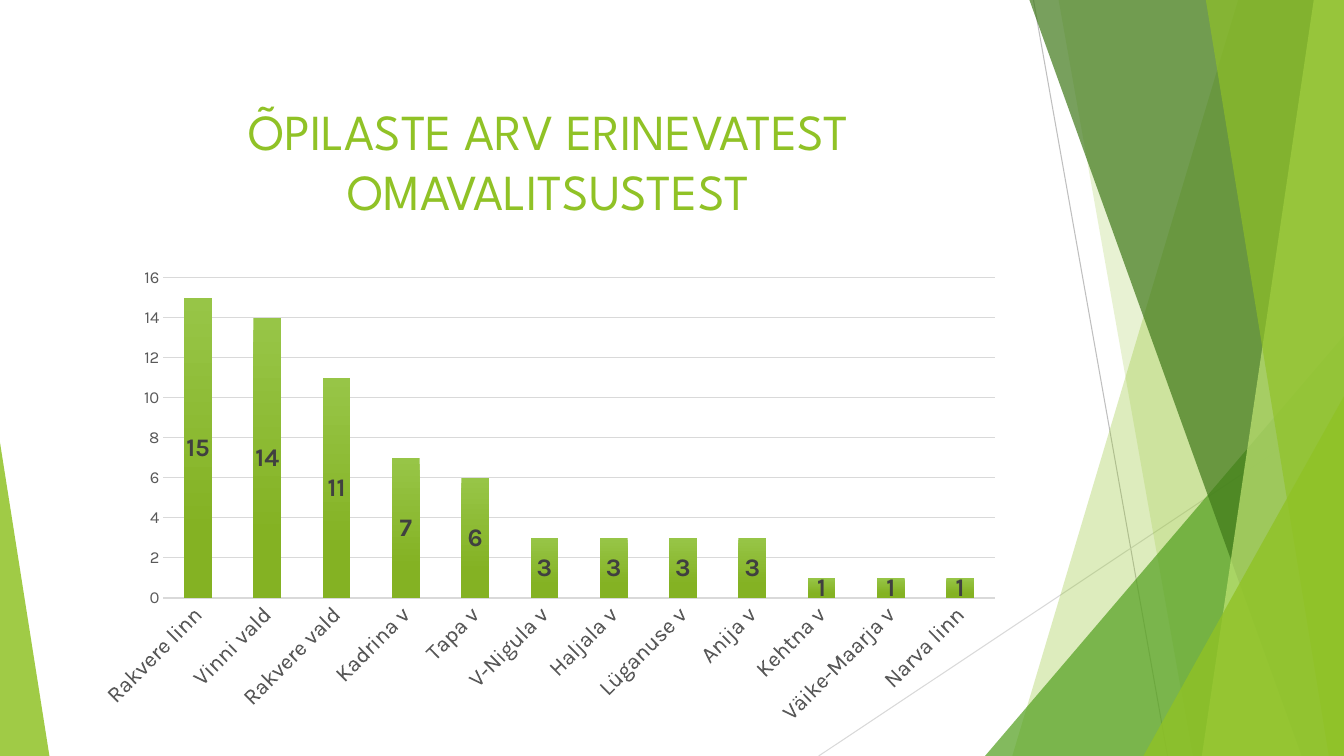
from lxml import etree
from pptx import Presentation, util as u
from pptx.chart.data import CategoryChartData
from pptx.dml.color import RGBColor
from pptx.enum import chart as charts, shapes, text
from pptx.oxml import ns

PX = 9144  # 100 px to the inch
WIDTH, HEIGHT = 1333, 750

LIME = RGBColor(0x90, 0xC2, 0x26)
PALE_LIME = RGBColor(0xC0, 0xE4, 0x74)
GREEN = RGBColor(0x54, 0xA0, 0x21)
DARK_GREEN = RGBColor(0x3F, 0x78, 0x19)
BAR_TOP = RGBColor(0x97, 0xC5, 0x47)
BAR_BOTTOM = RGBColor(0x84, 0xB2, 0x23)
RULE_GREY = RGBColor(0xBF, 0xBF, 0xBF)
LIGHT_GREY = RGBColor(0xD9, 0xD9, 0xD9)
AXIS_GREY = RGBColor(0x59, 0x59, 0x59)
LABEL_GREY = RGBColor(0x40, 0x40, 0x40)

TITLE_FONT, CHART_FONT = "League Spartan", "Karla"

PUPILS = {
    "Rakvere linn": 15, "Vinni vald": 14, "Rakvere vald": 11, "Kadrina v": 7,
    "Tapa v": 6, "V-Nigula v": 3, "Haljala v": 3, "Lüganuse v": 3,
    "Anija v": 3, "Kehtna v": 1, "Väike-Maarja v": 1, "Narva linn": 1,
}


def px(*lengths):
    return [u.Emu(length * PX) for length in lengths]


def set_font(font, name, size, color, bold=False):
    font.name, font.size, font.bold = name, u.Pt(size), bold
    font.color.rgb = color


def add_rule(page, start, end, color):
    rule = page.shapes.add_connector(
        shapes.MSO_CONNECTOR.STRAIGHT, *px(*start, *end))
    rule.line.color.rgb = color
    rule.line.width = u.Pt(0.75)
    etree.SubElement(rule._element.spPr, ns.qn("a:effectLst"))


def tint(shape, color, opacity):
    """Fill a shape with a see-through colour, without outline or shadow."""
    shape.shadow.inherit = False
    shape.line.fill.background()
    shape.fill.solid()
    shape.fill.fore_color.rgb = color
    srgb = shape._element.spPr.find(".//" + ns.qn("a:srgbClr"))
    etree.SubElement(srgb, ns.qn("a:alpha"), val=str(opacity * 1000))


def add_band(page, box, top_x, bottom_x, color, opacity):
    """Fill from a slanted left edge to the right side of the box."""
    left, top, width, height = box
    right, bottom = left + width, top + height
    builder = page.shapes.build_freeform(left + top_x, top, scale=PX)
    builder.add_line_segments(
        [(right, top), (right, bottom), (left + bottom_x, bottom)], close=True)
    tint(builder.convert_to_shape(), color, opacity)


def add_corner(page, box, apex, color, opacity):
    """Triangle whose apex lies at the given share of its width."""
    corner = page.shapes.add_shape(
        shapes.MSO_SHAPE.ISOSCELES_TRIANGLE, *px(*box))
    corner.adjustments[0] = apex
    tint(corner, color, opacity)


def add_facets(page, box):
    left, top, width, height = box
    right, bottom = left + width, top + height
    add_rule(page, (left + 48, top), (left + 181, bottom), RULE_GREY)
    add_rule(page, (right, top + 403), (left - 165, bottom), LIGHT_GREY)
    add_band(page, box, 251, 27, LIME, 30)
    add_band(page, box, 73, 206, LIME, 20)
    add_corner(page, (left, bottom - 417, width, 417), 1, GREEN, 72)
    add_band(page, box, 44, 314, DARK_GREEN, 70)
    add_band(page, box, 326, 215, PALE_LIME, 70)
    add_band(page, box, 219, 341, LIME, 65)
    add_corner(page, (right - 199, bottom - 357, 199, 357), 1, LIME, 80)


def add_title(page, box, wording):
    frame = page.shapes.add_textbox(*px(*box)).text_frame
    frame.word_wrap = True
    frame.vertical_anchor = text.MSO_ANCHOR.MIDDLE
    para = frame.paragraphs[0]
    para.text = wording
    para.alignment = text.PP_ALIGN.CENTER
    set_font(para.font, TITLE_FONT, 36, LIME)


def set_plot_area(chart, x, y, w, h):
    """Fix the inner plot area as shares of the chart's size."""
    plot_area = chart._chartSpace.chart.plotArea
    for old in plot_area.findall(ns.qn("c:layout")):
        plot_area.remove(old)
    layout = etree.Element(ns.qn("c:layout"))
    manual = etree.SubElement(layout, ns.qn("c:manualLayout"))
    settings = dict(layoutTarget="inner", xMode="edge", yMode="edge",
                    x=x, y=y, w=w, h=h)
    for name, value in settings.items():
        etree.SubElement(manual, ns.qn("c:" + name), val=str(value))
    plot_area.insert(0, layout)


def style_axes(chart):
    categories, values = chart.category_axis, chart.value_axis
    for axis, size in ((categories, 16), (values, 12)):
        axis.major_tick_mark = axis.minor_tick_mark = charts.XL_TICK_MARK.NONE
        set_font(axis.tick_labels.font, CHART_FONT, size, AXIS_GREY)
    categories.format.line.color.rgb = LIGHT_GREY
    categories.format.line.width = u.Pt(1)
    text_body = categories._element.find(ns.qn("c:txPr"))
    text_body.find(ns.qn("a:bodyPr")).set("rot", "-2700000")
    values.minimum_scale, values.maximum_scale, values.major_unit = 0, 16, 2
    values.format.line.fill.background()
    grid = values.major_gridlines.format.line
    grid.color.rgb, grid.width = LIGHT_GREY, u.Pt(0.75)


def style_bars(plot):
    plot.gap_width, plot.overlap = 150, 100
    plot.vary_by_categories = False
    fill = plot.series[0].format.fill
    fill.gradient()
    fill.gradient_angle = 270
    stops = ((0, BAR_TOP), (0.78, BAR_BOTTOM))
    for stop, (position, color) in zip(fill.gradient_stops, stops):
        stop.position, stop.color.rgb = position, color
    plot.has_data_labels = True
    labels = plot.data_labels
    labels.show_value = True
    labels.position = charts.XL_LABEL_POSITION.CENTER
    set_font(labels.font, CHART_FONT, 18, LABEL_GREY, bold=True)


def add_pupil_chart(page, box):
    data = CategoryChartData()
    data.categories = list(PUPILS)
    data.add_series("Series 1", list(PUPILS.values()))
    chart = page.shapes.add_chart(
        charts.XL_CHART_TYPE.COLUMN_STACKED, *px(*box), data).chart
    chart.has_legend = chart.has_title = False
    chart.font.name, chart.font.size = CHART_FONT, u.Pt(10)
    set_plot_area(chart, 0.06, 0.05, 0.91, 0.65)
    style_axes(chart)
    style_bars(chart.plots[0])


def main():
    deck = Presentation()
    deck.slide_width, deck.slide_height = px(WIDTH, HEIGHT)
    page = deck.slides.add_slide(deck.slide_layouts[6])
    add_facets(page, (977, 0, 356, HEIGHT))
    add_corner(page, (0, 439, 49, 311), 0, LIME, 85)
    add_title(page, (74, 87, 940, 144),
              "ÕPILASTE ARV ERINEVATEST OMAVALITSUSTEST")
    add_pupil_chart(page, (101, 251, 913, 489))
    deck.save("out.pptx")


if __name__ == "__main__":
    main()
